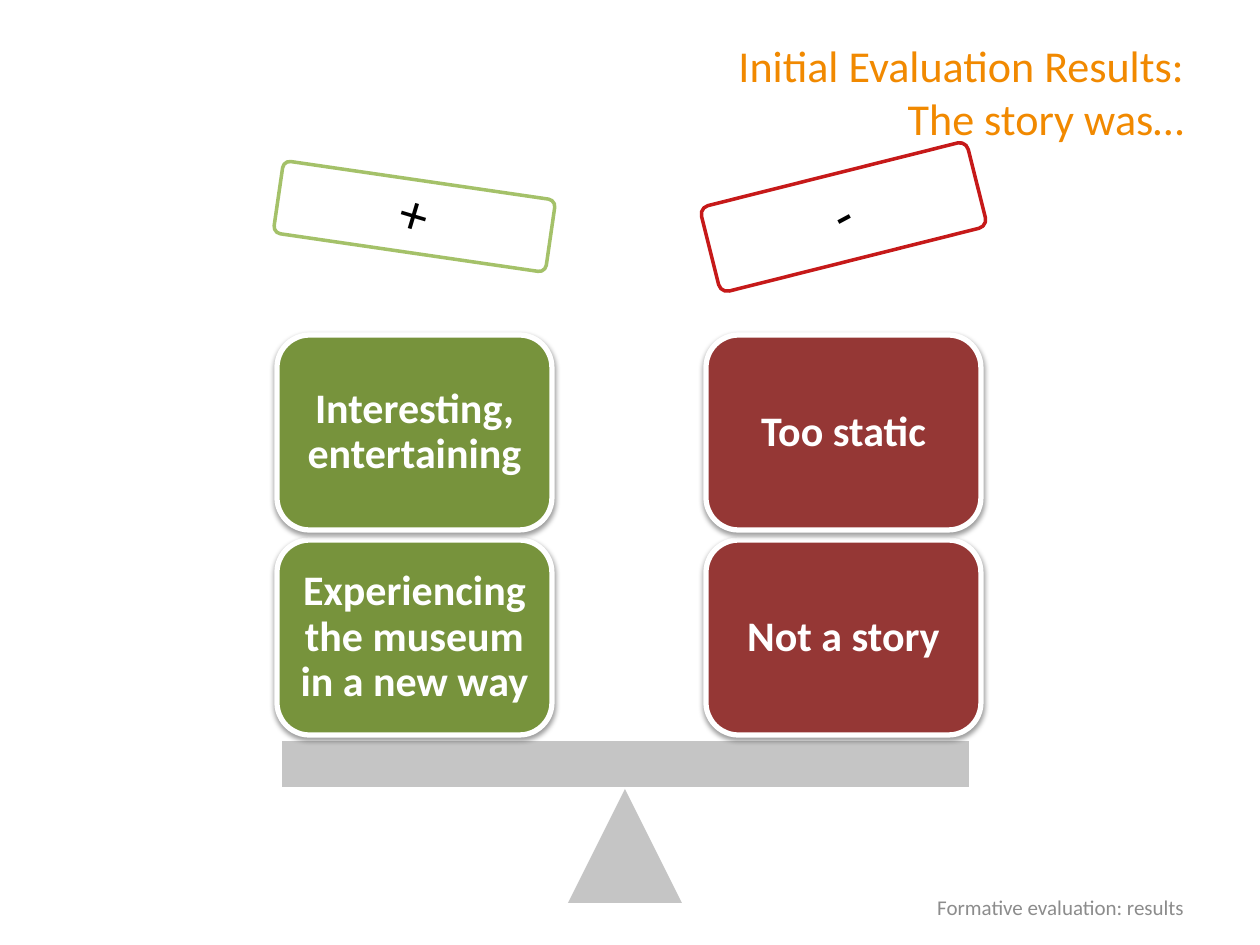
from lxml import etree
from pptx import Presentation, util as u
from pptx.dml.color import RGBColor
from pptx.enum import shapes, text
from pptx.oxml import ns

SCALE = 914400 / 126
KIND = shapes.MSO_SHAPE
SIDE = text.PP_ALIGN
MID = text.MSO_ANCHOR.MIDDLE


def px(n):
    return u.Emu(round(n * SCALE))


def tint(code):
    return RGBColor.from_string(code)


def add(node, tag, **attrs):
    return etree.SubElement(node, ns.qn(tag), {k: str(v) for k, v in attrs.items()})


def fade(form):
    for clr in form.element.spPr.iter(ns.qn("a:srgbClr")):
        add(clr, "a:alpha", val=90000)


class Board:
    font = "Calibri"
    gray = "BFBFBF"

    def __init__(self, slide):
        self.slide = slide

    def letter(self, form, words, size, color, align, pad, bold=False, space=None):
        frame = form.text_frame
        frame.word_wrap = True
        frame.margin_left = frame.margin_right = px(pad[0])
        frame.margin_top = frame.margin_bottom = px(pad[1])
        frame.text = words
        para = frame.paragraphs[0]
        para.alignment = align
        para.line_spacing = space
        for run in para.runs:
            font = run.font
            font.name, font.size, font.bold = self.font, u.Pt(size), bold
            font.color.rgb = tint(color)
        return frame

    def label(self, box, words, size, color, align=SIDE.RIGHT, pad=(13, 6), space=None):
        form = self.slide.shapes.add_textbox(*map(px, box))
        self.letter(form, words, size, color, align, pad, space=space)
        return form

    def shape(self, kind, box, fill=None, line=None, width=0):
        form = self.slide.shapes.add_shape(kind, *map(px, box))
        form.shadow.inherit = False
        if fill:
            form.fill.solid()
            form.fill.fore_color.rgb = tint(fill)
        else:
            form.fill.background()
        if line:
            form.line.color.rgb = tint(line)
            form.line.width = u.Pt(width)
        else:
            form.line.fill.background()
        return form

    def sign(self, box, mark, color, turn, tilt):
        form = self.shape(KIND.ROUNDED_RECTANGLE, box, line=color, width=2)
        form.adjustments[0] = 0.1
        form.rotation = turn
        fade(form)
        note = self.label(box, mark, 32, "000000", SIDE.CENTER, (16, 16), 0.9)
        note.text_frame.vertical_anchor = MID
        note.rotation = tilt

    def card(self, box, words, fill):
        form = self.shape(KIND.ROUNDED_RECTANGLE, box, fill, "FFFFFF", 3)
        glow = form.element.spPr.find(ns.qn("a:effectLst"))
        shade = add(glow, "a:outerShdw", blurRad=u.Pt(3.1), dist=u.Pt(1.6),
                    dir=5400000, rotWithShape=0)
        add(add(shade, "a:srgbClr", val="000000"), "a:alpha", val=38000)
        frame = self.letter(form, words, 24, "FFFFFF", SIDE.CENTER, (3, 3), True, 0.9)
        frame.vertical_anchor = MID

    def base(self, kind, box):
        fade(self.shape(kind, box, self.gray))


def main():
    deck = Presentation()
    deck.slide_width, deck.slide_height = px(1260), px(945)
    board = Board(deck.slides.add_slide(deck.slide_layouts[6]))

    board.label((441, 32, 756, 96), "Initial Evaluation Results:\vThe story was…", 25.2, "F18900")
    foot = board.label((903, 882, 294, 50), "Formative evaluation: results", 12, "8C8C8C")
    foot.text_frame.vertical_anchor = MID

    left, right, wide = 277, 706, 275
    board.sign((left, 180, wide, 73), "+", "9BBB59", 8.3, 16.7)
    board.sign((right, 173, wide, 88), "-", "C00000", 345.9, 331.8)

    board.base(KIND.ISOSCELES_TRIANGLE, (568, 789, 114, 114))
    board.base(KIND.RECTANGLE, (282, 741, 687, 46))

    stacks = [
        (right, "953735", ["Too static", "Not a story"]),
        (left, "77933C", ["Interesting, entertaining", "Experiencing the museum in a new way"]),
    ]
    for x, fill, items in stacks:
        for row, words in reversed(list(enumerate(items))):
            board.card((x, 335 + 205 * row, wide, 195), words, fill)

    deck.save("out.pptx")


if __name__ == "__main__":
    main()
